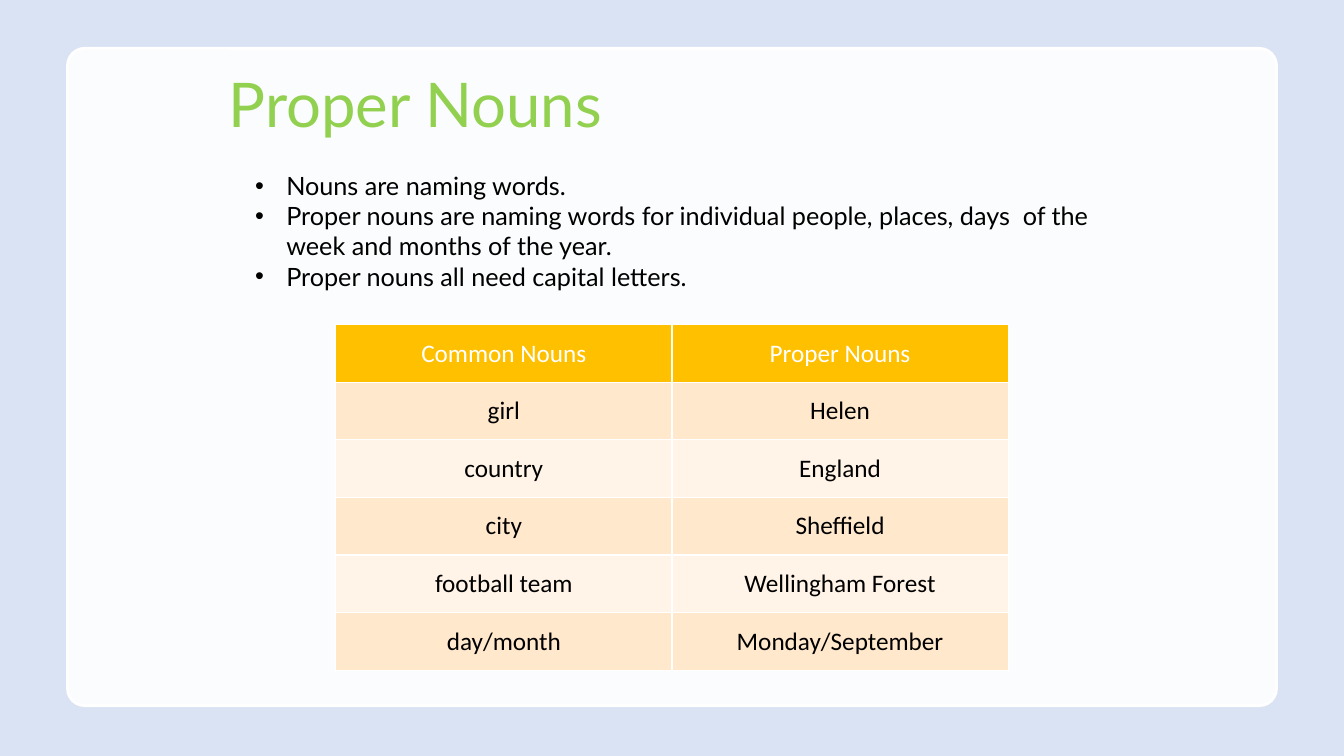
from lxml.etree import SubElement
from pptx import Presentation
from pptx.dml.color import RGBColor
from pptx.enum.shapes import MSO_SHAPE
from pptx.enum.text import MSO_ANCHOR, MSO_AUTO_SIZE, PP_ALIGN
from pptx.oxml.ns import qn
from pptx.util import Inches, Pt

TITLE = "Proper Nouns"
POINTS = [
    "Nouns are naming words.",
    "Proper nouns are naming words for individual people, places, days  of the week and months of the year.",
    "Proper nouns all need capital letters.",
]
NOUNS = [
    ("Common Nouns", "Proper Nouns"),
    ("girl", "Helen"),
    ("country", "England"),
    ("city", "Sheffield"),
    ("football team", "Wellingham Forest"),
    ("day/month", "Monday/September"),
]

PALE_BLUE = RGBColor(0xDA, 0xE3, 0xF3)
WHITE = RGBColor(0xFF, 0xFF, 0xFF)
BLACK = RGBColor(0, 0, 0)
GREEN = RGBColor(0x92, 0xD0, 0x50)
GOLD = RGBColor(0xFF, 0xC0, 0x00)
BANDS = [RGBColor(0xFF, 0xF4, 0xE7), RGBColor(0xFF, 0xE8, 0xCC)]

ROW_HEIGHT = Inches(3.43 / len(NOUNS))
BULLET_INDENT = Inches(0.31)


def add_span(para, text, font, size, color):
    span = para.add_run()
    span.text = text
    span.font.name = font
    span.font.size = Pt(size)
    span.font.bold = False
    span.font.color.rgb = color


def add_bullet(para):
    props = para._p.get_or_add_pPr()
    props.set("marL", str(BULLET_INDENT))
    props.set("indent", str(-BULLET_INDENT))
    SubElement(props, qn("a:buFont"), typeface="Arial")
    SubElement(props, qn("a:buChar"), char="•")


def add_borders(cell):
    props = cell._tc.get_or_add_tcPr()
    for side in ("lnL", "lnR", "lnT", "lnB"):
        line = SubElement(props, qn(f"a:{side}"), w=str(Pt(1)))
        paint = SubElement(line, qn("a:solidFill"))
        SubElement(paint, qn("a:srgbClr"), val=str(WHITE))


def add_card(page):
    card = page.shapes.add_shape(
        MSO_SHAPE.ROUNDED_RECTANGLE, Inches(0.67), Inches(0.48), Inches(11.99), Inches(6.52))
    card.adjustments[0] = 0.026
    card.shadow.inherit = False
    card.fill.solid()
    card.fill.fore_color.rgb = WHITE
    fill_color = card.element.spPr.find(qn("a:solidFill")).find(qn("a:srgbClr"))
    SubElement(fill_color, qn("a:alpha"), val="90000")
    card.line.color.rgb = WHITE
    card.line.width = Pt(2)
    page.shapes.title.element.addprevious(card.element)


def add_title(page):
    title = page.shapes.title
    title.left, title.top = Inches(2.17), Inches(0.52)
    title.width, title.height = Inches(8.99), Inches(1.09)
    title.text_frame.vertical_anchor = MSO_ANCHOR.MIDDLE
    para = title.text_frame.paragraphs[0]
    para.alignment = PP_ALIGN.LEFT
    para.line_spacing = 0.9
    add_span(para, TITLE, "Lato", 44, GREEN)


def add_points(page):
    box = page.shapes.add_textbox(Inches(2.53), Inches(1.61), Inches(8.27), Inches(1.37))
    frame = box.text_frame
    frame.word_wrap = True
    frame.auto_size = MSO_AUTO_SIZE.SHAPE_TO_FIT_TEXT
    frame.margin_left = frame.margin_right = 0
    frame.margin_top = frame.margin_bottom = Inches(0.08)
    for index, point in enumerate(POINTS):
        para = frame.add_paragraph() if index else frame.paragraphs[0]
        add_bullet(para)
        add_span(para, point, "Lato", 18, BLACK)


def add_noun_table(page):
    table = page.shapes.add_table(
        len(NOUNS), len(NOUNS[0]), Inches(3.33), Inches(3.22),
        Inches(6.67), ROW_HEIGHT * len(NOUNS)).table
    for row_index, nouns in enumerate(NOUNS):
        table.rows[row_index].height = ROW_HEIGHT
        for column_index, noun in enumerate(nouns):
            cell = table.cell(row_index, column_index)
            add_borders(cell)
            cell.fill.solid()
            cell.fill.fore_color.rgb = BANDS[row_index % 2] if row_index else GOLD
            cell.vertical_anchor = MSO_ANCHOR.MIDDLE
            para = cell.text_frame.paragraphs[0]
            para.alignment = PP_ALIGN.CENTER
            add_span(para, noun, "Calibri", 18, BLACK if row_index else WHITE)


def main():
    deck = Presentation()
    deck.slide_width, deck.slide_height = Inches(13.33), Inches(7.5)
    page = deck.slides.add_slide(deck.slide_layouts[5])
    page.background.fill.solid()
    page.background.fill.fore_color.rgb = PALE_BLUE
    add_card(page)
    add_title(page)
    add_points(page)
    add_noun_table(page)
    deck.save("out.pptx")


if __name__ == "__main__":
    main()
